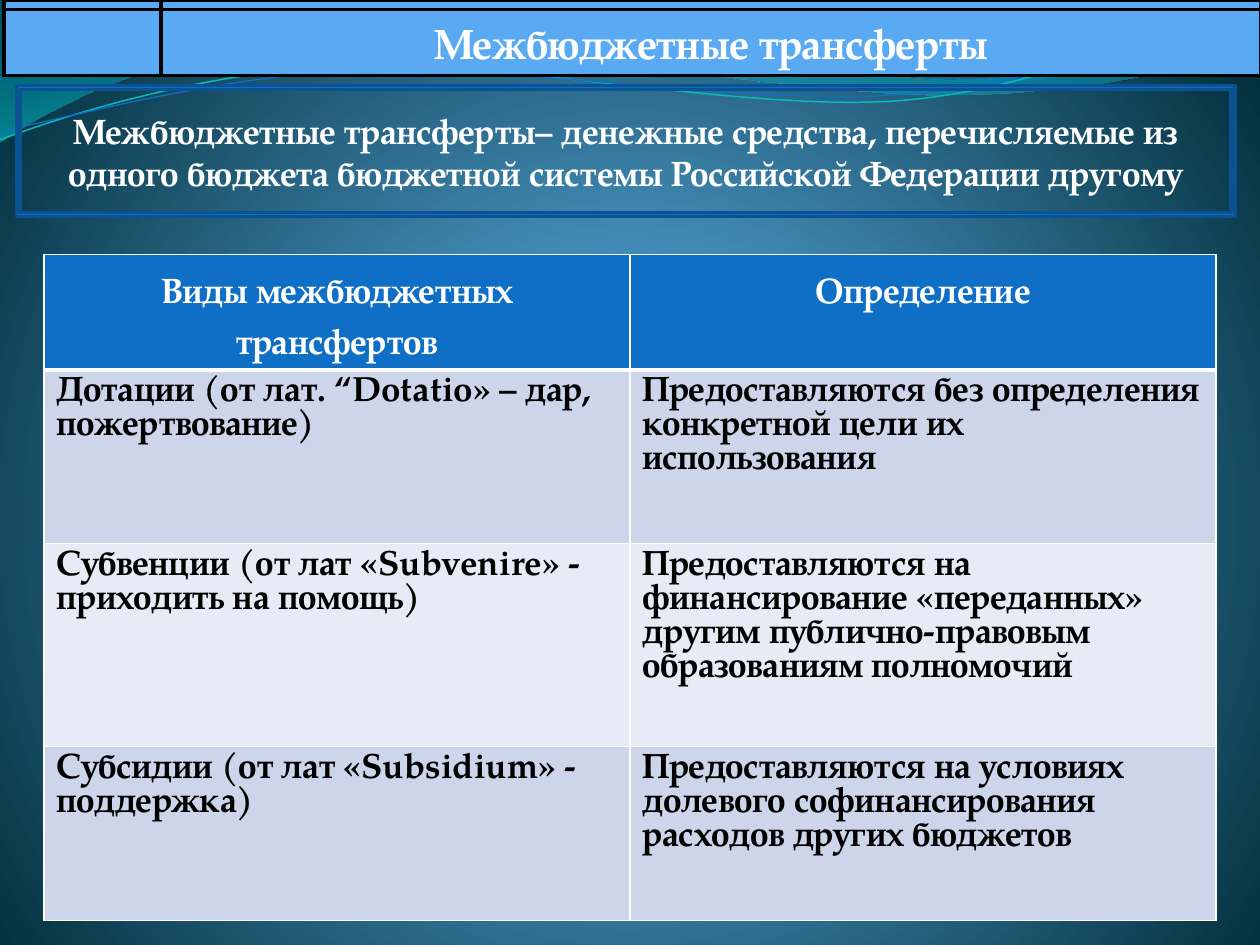
from lxml import etree
from pptx import Presentation
from pptx.dml.color import RGBColor
from pptx.enum.shapes import MSO_SHAPE
from pptx.enum.text import MSO_ANCHOR, PP_ALIGN
from pptx.oxml import parse_xml
from pptx.oxml.ns import nsdecls, qn
from pptx.util import Inches, Pt

CENTER, LEFT = PP_ALIGN.CENTER, PP_ALIGN.LEFT
MIDDLE = MSO_ANCHOR.MIDDLE
STORAGE, FRAME = MSO_SHAPE.FLOWCHART_INTERNAL_STORAGE, MSO_SHAPE.FRAME
FONT = "TeX Gyre Pagella"
WIDTH, HEIGHT = 10, 7.5

# Content
TITLE = "Межбюджетные трансферты"
DEFINITION = ("Межбюджетные трансферты– денежные средства, перечисляемые из "
              "одного бюджета бюджетной системы Российской Федерации другому")
ROWS = [
    ("Виды межбюджетных трансфертов", "Определение"),
    ("Дотации (от лат. “Dotatio» – дар, пожертвование)",
     "Предоставляются без определения конкретной цели их использования"),
    ("Субвенции (от лат «Subvenire» - приходить на помощь)",
     "Предоставляются на финансирование «переданных» другим "
     "публично-правовым образованиям полномочий"),
    ("Субсидии (от лат «Subsidium» - поддержка)",
     "Предоставляются на условиях долевого софинансирования "
     "расходов других бюджетов"),
]
ROW_HEIGHTS = [0.71, 1.38, 1.61, 1.38]
HEADER_FILL, BAND_FILLS = "0F6FC6", ("E7EBF5", "CCD5EA")

# Gradient stops: position, colour, opacity (percent)
BACKGROUND = [(0, "4AA0D6", 100), (25, "4C98C7", 100), (100, "002C38", 100)]
CIRCLE = ('<a:path path="circle"><a:fillToRect l="10000" t="110000" '
          'r="10000" b="100000"/></a:path>')
DOWNWARD = '<a:lin ang="5400000" scaled="1"/>'

# Waves: each step is one point (line) or three points (cubic curve)
WAVE_FILLS = [
    ([(0, "0074A1", 45), (100, "00C6CF", 55)],
     [[(0, 0)], [(4.4, -0.01)],
      [(4.76, 0.17), (6.64, 0.63), (7.58, 0.63)],
      [(8.53, 0.63), (9.58, 0.26), (10, 0.09)], [(10.01, 0.36)],
      [(9.83, 0.44), (8.7, 0.76), (7.46, 0.75)],
      [(6.22, 0.75), (3.82, 0.28), (2.57, 0.34)],
      [(1.29, 0.36), (0.46, 0.83), (-0.01, 1.13)]]),
    ([(0, "00A1A9", 30), (80, "008BBF", 45)],
     [[(4.79, -0.01)],
      [(5.09, 0.11), (6.82, 0.62), (7.69, 0.65)],
      [(8.56, 0.69), (9.61, 0.32), (10, 0.21)], [(10, 0)]]),
]
WAVE_LINES = [
    ("0AB8BF", 0.85,
     [[(0, 1.11)], [(0.48, 0.93), (1.58, 0.57), (2.77, 0.52)],
      [(3.95, 0.47), (5.93, 0.89), (7.13, 0.8)],
      [(8.33, 0.71), (9.38, 0.15), (9.98, -0.02)]]),
    ("0F6FC6", 0.75,
     [[(0, 1.04)], [(0.47, 0.96), (1.64, 0.61), (2.83, 0.56)],
      [(4.03, 0.51), (5.97, 0.84), (7.17, 0.75)],
      [(8.36, 0.67), (9.41, 0.21), (10, 0.06)]]),
]


def color(value):
    return RGBColor.from_string(value)


def set_gradient(fill, parent, stops, direction):
    """Swap the plain gradient of a fill for one with the given stops."""
    fill.gradient()
    stop_xml = "".join(
        f'<a:gs pos="{position * 1000}"><a:srgbClr val="{value}">'
        f'<a:alpha val="{opacity * 1000}"/></a:srgbClr></a:gs>'
        for position, value, opacity in stops)
    gradient = parse_xml(f'<a:gradFill {nsdecls("a")} rotWithShape="1">'
                         f'<a:gsLst>{stop_xml}</a:gsLst>{direction}</a:gradFill>')
    parent.replace(parent.find(qn("a:gradFill")), gradient)


def add_wave(slide, steps, close):
    """Draw all points as a freeform, then join each triple into a curve."""
    points = [(Inches(x), Inches(y)) for step in steps for x, y in step]
    builder = slide.shapes.build_freeform(*points[0])
    builder.add_line_segments(points[1:], close=close)
    shape = builder.convert_to_shape()
    shape.shadow.inherit = False
    segments = iter(list(shape.element.iter(qn("a:lnTo"))))
    for step in steps[1:]:
        group = [next(segments) for _ in step]
        if len(group) == 3:
            curve = etree.Element(qn("a:cubicBezTo"))
            group[0].addprevious(curve)
            for segment in group:
                curve.append(segment[0])
                segment.getparent().remove(segment)
    return shape


def write(text_frame, text, size, value, align=CENTER, spacing=None):
    text_frame.text = text
    text_frame.word_wrap = True
    paragraph = text_frame.paragraphs[0]
    paragraph.alignment = align
    if spacing:
        paragraph.line_spacing = spacing
    font = paragraph.runs[0].font
    font.name, font.size, font.bold = FONT, Pt(size), True
    font.color.rgb = color(value)


def add_panel(slide, kind, box, fill, line, text, size):
    shape = slide.shapes.add_shape(kind, *map(Inches, box))
    shape.shadow.inherit = False
    shape.fill.solid()
    shape.fill.fore_color.rgb = color(fill)
    shape.line.color.rgb = color(line)
    shape.line.width = Pt(2)
    shape.text_frame.vertical_anchor = MIDDLE
    write(shape.text_frame, text, size, "FFFFFF")
    return shape


def set_borders(cell, widths):
    properties = cell._tc.get_or_add_tcPr()
    for index, (side, width) in enumerate(widths.items()):
        border = etree.Element(qn(f"a:ln{side}"), w=str(Pt(width)))
        solid = etree.SubElement(border, qn("a:solidFill"))
        etree.SubElement(solid, qn("a:srgbClr"), val="FFFFFF")
        properties.insert(index, border)


def add_transfer_table(slide):
    left, top, width = 0.35, 2.02, 9.3
    frame = slide.shapes.add_table(len(ROWS), 2, Inches(left), Inches(top),
                                   Inches(width), Inches(sum(ROW_HEIGHTS)))
    table = frame.table
    for column in table.columns:
        column.width = Inches(width / 2)
    for row_index, texts in enumerate(ROWS):
        header = row_index == 0
        table.rows[row_index].height = Inches(ROW_HEIGHTS[row_index])
        for column_index, text in enumerate(texts):
            cell = table.cell(row_index, column_index)
            cell.fill.solid()
            cell.fill.fore_color.rgb = color(HEADER_FILL if header else BAND_FILLS[row_index % 2])
            set_borders(cell, {"L": 1, "R": 1, "T": 3 if row_index == 1 else 1,
                               "B": 3 if header else 1})
            if header:
                write(cell.text_frame, text, 20, "FFFFFF", CENTER, 1.5)
            else:
                write(cell.text_frame, text, 20, "000000", LEFT)


def main():
    presentation = Presentation()
    presentation.slide_width, presentation.slide_height = Inches(WIDTH), Inches(HEIGHT)
    slide = presentation.slides.add_slide(presentation.slide_layouts[6])

    # Background and waves
    background_fill = slide.background.fill
    background_fill.gradient()
    set_gradient(background_fill, next(slide.element.iter(qn("p:bgPr"))), BACKGROUND, CIRCLE)
    for stops, steps in WAVE_FILLS:
        wave = add_wave(slide, steps, close=True)
        set_gradient(wave.fill, wave.element.spPr, stops, DOWNWARD)
        wave.line.fill.background()
    for value, width, steps in WAVE_LINES:
        wave = add_wave(slide, steps, close=False)
        wave.fill.background()
        wave.line.color.rgb = color(value)
        wave.line.width = Pt(width)

    # Title bar, table and framed definition
    add_panel(slide, STORAGE, (0.03, 0, 9.98, 0.6), "59AAF2", "000000", TITLE, 24)
    add_transfer_table(slide)
    definition = add_panel(slide, FRAME, (0.13, 0.68, 9.67, 1.04),
                           "0F6FC6", "0B5292", DEFINITION, 20)
    definition.adjustments[0] = 0.03

    presentation.save("out.pptx")


if __name__ == "__main__":
    main()
